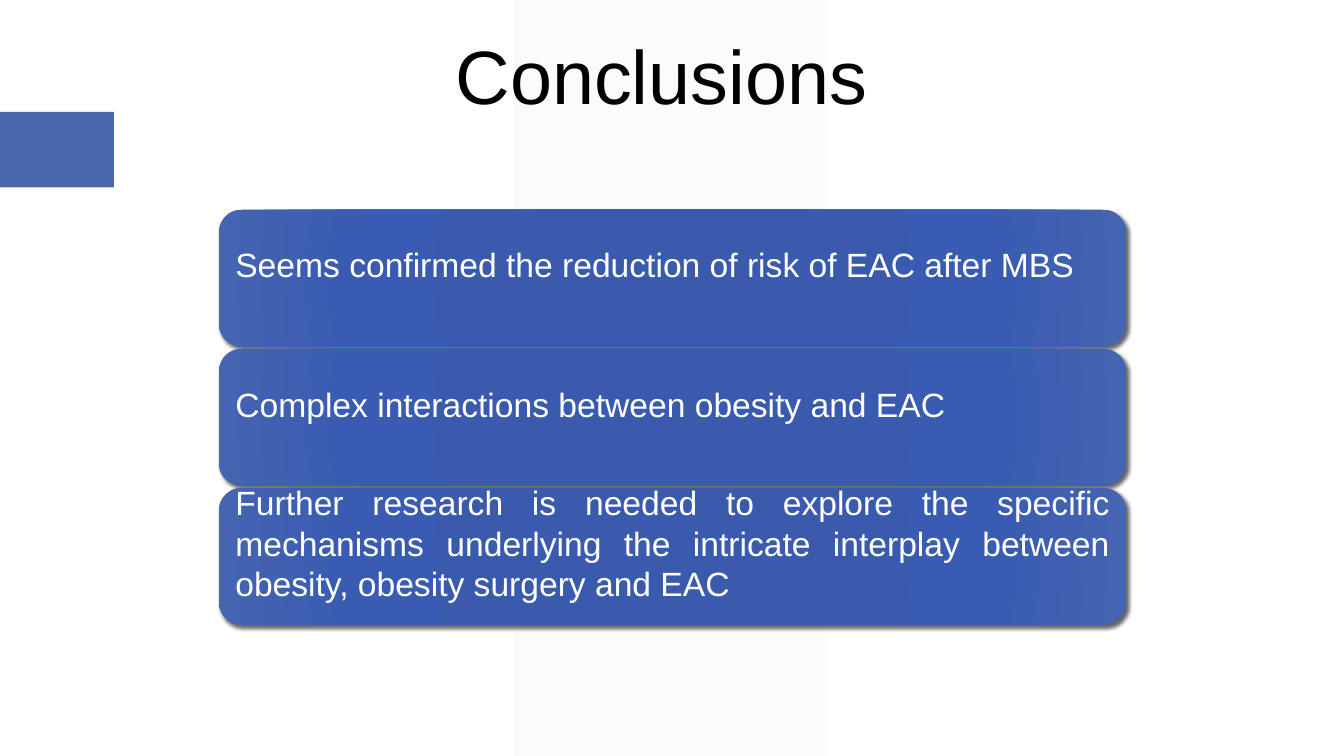
from pptx import Presentation
from pptx.dml.color import RGBColor
from pptx.enum.shapes import MSO_SHAPE
from pptx.enum.text import MSO_ANCHOR, MSO_AUTO_SIZE, PP_ALIGN
from pptx.oxml import parse_xml
from pptx.oxml.ns import nsdecls
from pptx.util import Inches, Pt

PARALLELOGRAM = MSO_SHAPE.PARALLELOGRAM
RECTANGLE = MSO_SHAPE.RECTANGLE
ROUNDED_RECTANGLE = MSO_SHAPE.ROUNDED_RECTANGLE
MIDDLE = MSO_ANCHOR.MIDDLE
NO_AUTO_SIZE = MSO_AUTO_SIZE.NONE
CENTER = PP_ALIGN.CENTER
JUSTIFY = PP_ALIGN.JUSTIFY

BLACK = RGBColor(0x00, 0x00, 0x00)
WHITE = RGBColor(0xFF, 0xFF, 0xFF)
BLUE = RGBColor(0x4A, 0x66, 0xAC)
PALE_GRAY = RGBColor(0xF2, 0xF2, 0xF2)
CARD_GRADIENT = (
    (0, RGBColor(0x37, 0x59, 0xAE)),
    (34, RGBColor(0x3A, 0x5B, 0xAD)),
    (70, RGBColor(0x39, 0x5B, 0xB2)),
    (100, RGBColor(0x45, 0x64, 0xB1)),
)

FONT = "Arial"
CONCLUSIONS = (
    "Seems confirmed the reduction of risk of EAC after MBS ",
    "Complex interactions between obesity and EAC ",
    "Further research is needed to explore the specific mechanisms underlying "
    "the intricate interplay between obesity, obesity surgery and EAC",
)
CARD_TOP = 2.08
CARD_PITCH = 1.38


def set_attributes(target, values):
    for name, value in values.items():
        setattr(target, name, value)


def write_text(shape, text, size, color, alignment, margins):
    frame = shape.text_frame
    frame.text = text
    set_attributes(frame, {
        "word_wrap": True,
        "auto_size": NO_AUTO_SIZE,
        "vertical_anchor": MIDDLE,
        **{f"margin_{side}": Inches(margin) for side, margin in margins.items()},
    })
    paragraph = frame.paragraphs[0]
    set_attributes(paragraph, {"alignment": alignment, "line_spacing": 1.0,
                               "space_before": Pt(0)})
    set_attributes(paragraph.font, {"name": FONT, "size": Pt(size)})
    paragraph.font.color.rgb = color


def add_plain_shape(slide, kind, left, top, width, height, color):
    shape = slide.shapes.add_shape(
        kind, Inches(left), Inches(top), Inches(width), Inches(height))
    shape.shadow.inherit = False
    shape.line.fill.background()
    shape.fill.solid()
    shape.fill.fore_color.rgb = color
    return shape


def add_band(slide):
    """Add the translucent vertical band behind the title."""
    band = add_plain_shape(slide, PARALLELOGRAM, 5.1, 0, 3.12, 7.5, PALE_GRAY)
    band.adjustments[0] = 0
    color = band.element.spPr.find(".//{*}solidFill/{*}srgbClr")
    color.append(parse_xml(f'<a:alpha {nsdecls("a")} val="30000"/>'))
    slide.shapes.title.element.addprevious(band.element)


def add_title(slide, text):
    title = slide.shapes.title
    set_attributes(title, {"left": Inches(1.86), "top": Inches(0.23),
                           "width": Inches(9.61), "height": Inches(1.01)})
    write_text(title, text, 54, BLACK, CENTER, {"top": 0.05, "bottom": 0.05})


def apply_gradient(shape):
    stops = "".join(
        f'<a:gs pos="{position * 1000}"><a:srgbClr val="{color}"/></a:gs>'
        for position, color in CARD_GRADIENT)
    gradient = parse_xml(
        f'<a:gradFill {nsdecls("a")} rotWithShape="1"><a:gsLst>{stops}</a:gsLst>'
        '<a:path path="circle">'
        '<a:fillToRect l="100000" t="100000" r="100000" b="100000"/>'
        '</a:path></a:gradFill>')
    properties = shape.element.spPr
    properties.replace(properties.find("{*}solidFill"), gradient)


def apply_shadow(shape):
    effects = shape.element.spPr.find("{*}effectLst")
    effects.append(parse_xml(
        f'<a:outerShdw {nsdecls("a")} blurRad="{Pt(3)}" dist="{Pt(2)}" '
        'dir="2700000" algn="ctr" rotWithShape="0">'
        '<a:srgbClr val="000000"><a:alpha val="60000"/></a:srgbClr>'
        '</a:outerShdw>'))


def add_card(slide, top, text):
    card = add_plain_shape(slide, ROUNDED_RECTANGLE, 2.17, top, 9, 1.36, BLUE)
    apply_gradient(card)
    apply_shadow(card)
    write_text(card, text, 24, WHITE, JUSTIFY,
               {"left": 0.1, "right": 0.1, "top": 0, "bottom": 0.27})


def main():
    presentation = Presentation()
    set_attributes(presentation, {"slide_width": Inches(13.33),
                                  "slide_height": Inches(7.5)})
    title_only = presentation.slide_layouts.get_by_name("Title Only")
    slide = presentation.slides.add_slide(title_only)

    add_title(slide, "Conclusions ")
    add_band(slide)
    add_plain_shape(slide, RECTANGLE, 0, 1.11, 1.13, 0.75, BLUE)
    for index, conclusion in enumerate(CONCLUSIONS):
        add_card(slide, CARD_TOP + index * CARD_PITCH, conclusion)

    presentation.save("out.pptx")


if __name__ == "__main__":
    main()
